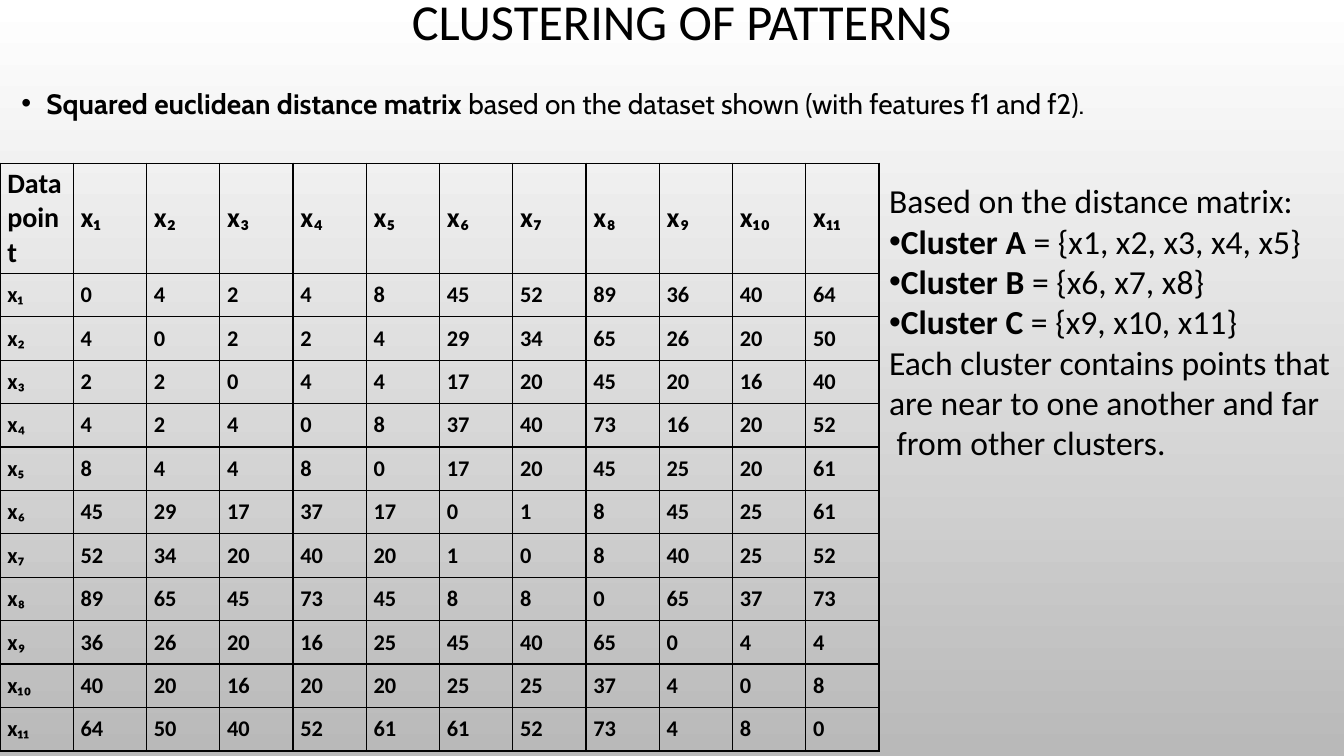
from dataclasses import dataclass

from lxml.etree import SubElement
from pptx import Presentation
from pptx.dml.color import RGBColor as RGB
from pptx.enum.text import MSO_ANCHOR as ANCHOR, MSO_AUTO_SIZE as AUTO, PP_ALIGN as ALIGN
from pptx.oxml.ns import qn
from pptx.util import Pt


@dataclass(frozen=True)
class Theme:
    ink: RGB = RGB(0, 0, 0)
    top: RGB = RGB(0xFF, 0xFF, 0xFF)
    bottom: RGB = RGB(0xB9, 0xB9, 0xB9)
    main_font: str = "Calibri"
    body_font: str = "Cabin"
    title: int = 36
    aside: int = 24
    lead: int = 20
    cell: int = 16


THEME = Theme()

POINTS = ["x₁", "x₂", "x₃", "x₄", "x₅", "x₆", "x₇", "x₈", "x₉", "x₁₀", "x₁₁"]
DISTANCES = [
    [0, 4, 2, 4, 8, 45, 52, 89, 36, 40, 64],
    [4, 0, 2, 2, 4, 29, 34, 65, 26, 20, 50],
    [2, 2, 0, 4, 4, 17, 20, 45, 20, 16, 40],
    [4, 2, 4, 0, 8, 37, 40, 73, 16, 20, 52],
    [8, 4, 4, 8, 0, 17, 20, 45, 25, 20, 61],
    [45, 29, 17, 37, 17, 0, 1, 8, 45, 25, 61],
    [52, 34, 20, 40, 20, 1, 0, 8, 40, 25, 52],
    [89, 65, 45, 73, 45, 8, 8, 0, 65, 37, 73],
    [36, 26, 20, 16, 25, 45, 40, 65, 0, 4, 4],
    [40, 20, 16, 20, 20, 25, 25, 37, 4, 0, 8],
    [64, 50, 40, 52, 61, 61, 52, 73, 4, 8, 0],
]
CONCLUSIONS = [
    ("", "Based on the distance matrix:"),
    ("Cluster A", " = {x1, x2, x3, x4, x5}"),
    ("Cluster B", " = {x6, x7, x8}"),
    ("Cluster C", " = {x9, x10, x11}"),
    ("", "Each cluster contains points that"),
    ("", "are near to one another and far"),
    ("", " from other clusters."),
]


def place(sp, box):
    sp.left, sp.top, sp.width, sp.height = map(Pt, box)


def add_run(p, text, size, font, bold=False):
    r = p.add_run()
    r.text = text
    r.font.size = Pt(size)
    r.font.name = font
    r.font.bold = bold
    r.font.color.rgb = THEME.ink


def add_bullet(p, indent):
    pPr = p._p.get_or_add_pPr()
    pPr.set("marL", str(Pt(indent)))
    pPr.set("indent", str(Pt(-indent)))
    color = SubElement(pPr, qn("a:buClr"))
    SubElement(color, qn("a:srgbClr")).set("val", str(THEME.ink))
    SubElement(pPr, qn("a:buFont")).set("typeface", "Arial")
    SubElement(pPr, qn("a:buChar")).set("char", "•")


def add_borders(cell):
    tcPr = cell._tc.get_or_add_tcPr()
    for side in ("lnL", "lnR", "lnT", "lnB"):
        ln = SubElement(tcPr, qn(f"a:{side}"))
        ln.set("w", str(Pt(1)))
        fill = SubElement(ln, qn("a:solidFill"))
        SubElement(fill, qn("a:srgbClr")).set("val", str(THEME.ink))


def paint_background(slide):
    fill = slide.background.fill
    fill.gradient()
    fill.gradient_angle = 270
    for stop, color in zip(fill.gradient_stops, (THEME.top, THEME.bottom)):
        stop.color.rgb = color


def fill_title(sp, box):
    place(sp, box)
    tf = sp.text_frame
    tf.auto_size = AUTO.NONE
    tf.vertical_anchor = ANCHOR.MIDDLE
    p = tf.paragraphs[0]
    p.alignment = ALIGN.CENTER
    p.line_spacing = 0.9
    add_run(p, "CLUSTERING OF PATTERNS", THEME.title, THEME.main_font)


def fill_lead(sp, box):
    place(sp, box)
    tf = sp.text_frame
    tf.auto_size = AUTO.NONE
    p = tf.paragraphs[0]
    add_bullet(p, 18)
    p.line_spacing = 1.2
    p.space_before = Pt(0)
    add_run(p, "Squared euclidean distance matrix", THEME.lead, THEME.body_font, True)
    add_run(p, " based on the dataset shown (with features f1 and f2).", THEME.lead, THEME.body_font)


def fill_cell(cell, text, size):
    cell.margin_left = cell.margin_right = Pt(5.2)
    cell.margin_top = cell.margin_bottom = Pt(2.6)
    cell.vertical_anchor = ANCHOR.MIDDLE
    add_borders(cell)
    cell.fill.background()
    add_run(cell.text_frame.paragraphs[0], text, size, THEME.main_font, True)


def add_matrix(slide, box, header_height):
    rows = [["Data point", *POINTS]]
    rows += [[name, *values] for name, values in zip(POINTS, DISTANCES)]
    count = len(rows)
    table = slide.shapes.add_table(count, count, *map(Pt, box)).table
    table.first_row = table.horz_banding = False
    for col in table.columns:
        col.width = Pt(box[2] / count)
    for i, values in enumerate(rows):
        table.rows[i].height = Pt((box[3] - header_height) / (count - 1) if i else header_height)
        for j, value in enumerate(values):
            fill_cell(table.cell(i, j), str(value), THEME.cell if i else THEME.lead)


def add_conclusions(slide, box):
    tf = slide.shapes.add_textbox(*map(Pt, box)).text_frame
    tf.word_wrap = True
    tf.auto_size = AUTO.SHAPE_TO_FIT_TEXT
    for i, (cluster, text) in enumerate(CONCLUSIONS):
        p = tf.add_paragraph() if i else tf.paragraphs[0]
        if cluster:
            add_bullet(p, 0)
            add_run(p, cluster, THEME.aside, THEME.main_font, True)
        add_run(p, text, THEME.aside, THEME.main_font)


def build_matrix_slide(prs):
    slide = prs.slides.add_slide(prs.slide_layouts[1])
    paint_background(slide)
    fill_title(slide.shapes.title, (79, -27.4, 816, 90))
    fill_lead(slide.placeholders[1], (8, 53.3, 880, 486.7))
    add_matrix(slide, (0, 116.6, 628, 420), 78.6)
    add_conclusions(slide, (628, 125.3, 480, 211))


def main():
    prs = Presentation()
    prs.slide_width, prs.slide_height = Pt(960), Pt(540)
    build_matrix_slide(prs)
    prs.save("out.pptx")


if __name__ == "__main__":
    main()
